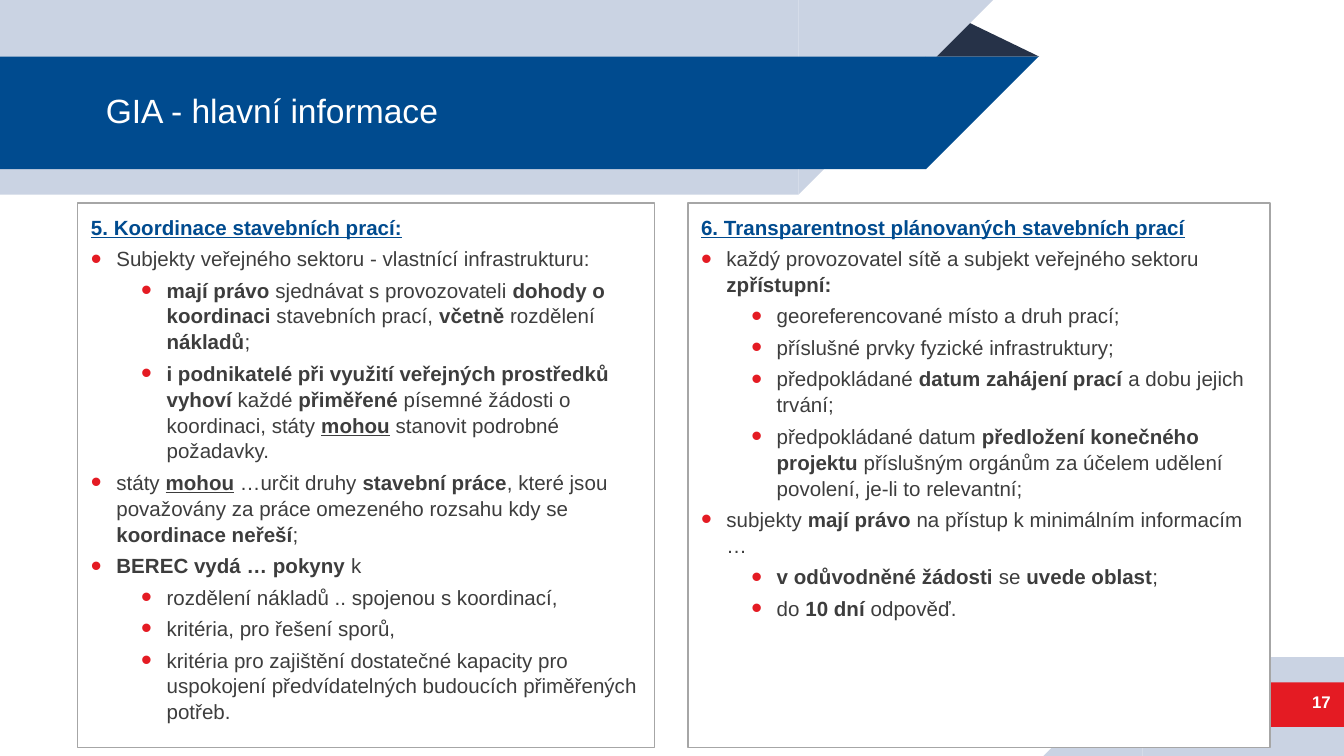
"""Build the slide on coordination and transparency of civil works."""
from lxml.etree import SubElement
from pptx import Presentation
from pptx.dml.color import RGBColor as RGB
from pptx.enum.shapes import MSO_SHAPE as SHAPE
from pptx.enum.text import MSO_ANCHOR as ANCHOR, PP_ALIGN as ALIGN
from pptx.oxml.ns import qn
from pptx.util import Cm, Pt

COLORS = {"pale": "CAD3E3", "blue": "004B8F", "navy": "263248", "red": "E41B23",
          "white": "FFFFFF", "grey": "A6A6A6", "text": "3D3D3D"}

TITLE = "GIA - hlavní informace"
NUMBER = "17"

# *bold*, *_bold and underlined*
PANELS = [
    ((1.47, 3.84, 10.9, 10.29), "5. Koordinace stavebních prací:", [
        (0, "Subjekty veřejného sektoru - vlastnící infrastrukturu:"),
        (1, "*mají právo *sjednávat s provozovateli *dohody o koordinaci* stavebních prací, "
            "*včetně* rozdělení *nákladů*;"),
        (1, "*i podnikatelé při využití veřejných prostředků vyhoví* každé *přiměřené* "
            "písemné žádosti o koordinaci, státy *_mohou* stanovit podrobné požadavky."),
        (0, "státy *_mohou* …určit druhy *stavební práce*, které jsou považovány za práce "
            "omezeného rozsahu kdy se *koordinace neřeší*;"),
        (0, "*BEREC vydá … pokyny *k"),
        (1, "rozdělení nákladů .. spojenou s koordinací,"),
        (1, "kritéria, pro řešení sporů,"),
        (1, "kritéria pro zajištění dostatečné kapacity pro uspokojení předvídatelných "
            "budoucích přiměřených potřeb."),
    ]),
    ((13, 3.84, 11, 10.29), "6. Transparentnost plánovaných stavebních prací", [
        (0, "každý provozovatel sítě a subjekt veřejného sektoru *zpřístupní:*"),
        (1, "georeferencované místo a druh prací;"),
        (1, "příslušné prvky fyzické infrastruktury;"),
        (1, "předpokládané *datum zahájení prací *a dobu jejich trvání;"),
        (1, "předpokládané datum *předložení konečného projektu* příslušným orgánům za "
            "účelem udělení povolení, je-li to relevantní;"),
        (0, "subjekty *mají právo *na přístup k minimálním informacím …"),
        (1, "*v odůvodněné žádosti *se *uvede oblast*;"),
        (1, "do *10 dní *odpověď."),
    ]),
]

DECOR = [
    (SHAPE.ISOSCELES_TRIANGLE, (17.48, 0.36, 2.16, 0.71), "navy", 0),
    (SHAPE.RECTANGLE, (0, 0, 15.09, 3.68), "pale", 0),
    (SHAPE.RIGHT_TRIANGLE, (15.09, 0, 3.68, 3.68), "pale", 90),
    (SHAPE.RECTANGLE, (0, 1.07, 17.5, 2.13), "blue", 0),
    (SHAPE.RIGHT_TRIANGLE, (17.5, 1.07, 2.13, 2.13), "blue", 90),
    (SHAPE.RECTANGLE, (21.59, 12.42, 3.81, 1.87), "pale", 0),
    (SHAPE.RIGHT_TRIANGLE, (19.72, 12.42, 1.87, 1.87), "pale", 270),
    (SHAPE.RECTANGLE, (20.14, 12.9, 5.26, 0.84), "red", 0),
]


def add_shape(s, kind, box, color, rotation=0):
    sp = s.shapes.add_shape(kind, *map(Cm, box))
    sp.shadow.inherit = False
    sp.fill.solid()
    sp.fill.fore_color.rgb = RGB.from_string(COLORS[color])
    sp.line.fill.background()
    sp.rotation = rotation
    return sp


def add_run(p, text, color, **formats):
    r = p.add_run()
    r.text = text
    r.font.color.rgb = RGB.from_string(COLORS[color])
    for name, value in ({"name": "Arial", "size": Pt(11)} | formats).items():
        setattr(r.font, name, value)


def add_label(s, box, text, align, line_spacing, **formats):
    tf = s.shapes.add_textbox(*map(Cm, box)).text_frame
    tf.word_wrap, tf.vertical_anchor = True, ANCHOR.MIDDLE
    p = tf.paragraphs[0]
    p.alignment, p.line_spacing = align, line_spacing
    add_run(p, text, "white", **formats)


def add_bullet(tf, level, text):
    p = tf.add_paragraph()
    pPr = p._p.get_or_add_pPr()
    pPr.set("marL", str(Cm(0.48 + 0.95 * level)))
    pPr.set("indent", str(-Cm(0.48)))
    SubElement(SubElement(pPr, qn("a:buClr")), qn("a:srgbClr"), val=COLORS["red"])
    SubElement(pPr, qn("a:buSzPct"), val="150000")
    SubElement(pPr, qn("a:buFont"), typeface="Arial")
    SubElement(pPr, qn("a:buChar"), char="•")
    formats = {"level": level, "alignment": ALIGN.LEFT, "space_before": Pt(3),
               "line_spacing": 1.05}
    for name, value in formats.items():
        setattr(p, name, value)
    for i, part in enumerate(text.split("*")):
        if part:
            add_run(p, part.lstrip("_"), "text", bold=i % 2 == 1,
                    underline=part.startswith("_"))


def add_panel(s, box, heading, bullets):
    sp = add_shape(s, SHAPE.RECTANGLE, box, "white")
    sp.line.color.rgb = RGB.from_string(COLORS["grey"])
    sp.line.width = Pt(0.75)
    tf = sp.text_frame
    tf.word_wrap, tf.vertical_anchor = True, ANCHOR.TOP
    p = tf.paragraphs[0]
    p.alignment, p.line_spacing = ALIGN.LEFT, 1.2
    add_run(p, heading, "blue", bold=True, underline=True)
    for level, text in bullets:
        add_bullet(tf, level, text)


def main():
    prs = Presentation()
    prs.slide_width, prs.slide_height = Cm(25.4), Cm(14.29)
    s = prs.slides.add_slide(prs.slide_layouts[6])
    for kind, box, color, rotation in DECOR:
        sp = add_shape(s, kind, box, color, rotation)
        if kind == SHAPE.ISOSCELES_TRIANGLE:
            sp.adjustments[0] = 0.32
    add_label(s, (1.75, 1.07, 17.27, 2.13), TITLE, ALIGN.LEFT, 0.9, size=Pt(18))
    add_label(s, (22.73, 12.88, 2.67, 0.76), NUMBER, ALIGN.RIGHT, 1.0, size=Pt(9), bold=True)
    for panel in PANELS:
        add_panel(s, *panel)
    prs.save("out.pptx")


if __name__ == "__main__":
    main()
